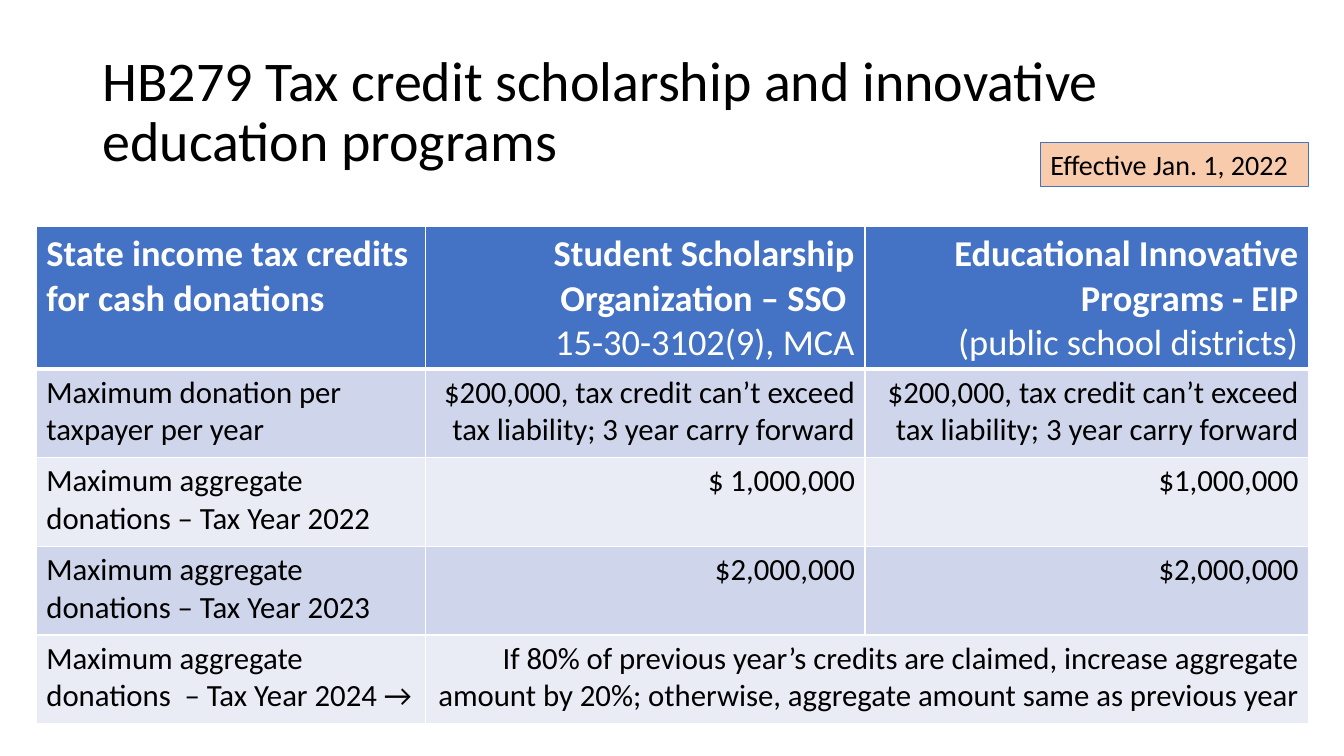
from lxml import etree
from pptx import Presentation, util as u
from pptx.dml.color import RGBColor
from pptx.enum import shapes, text
from pptx.oxml import ns

THEME = {
    "font": "Calibri", "ink": "000000", "white": "FFFFFF", "accent": "4472C4",
    "bands": ("CFD5EA", "E9EBF5"), "badge": "F8CBAD",
    "title": 40, "header": 26, "body": 22, "note": 20,
}
LEFT, RIGHT = 0.36, 12.98
TABLE_TOP = 2.25
COLUMNS = (3.86, 4.36, 4.4)
HEADER_HEIGHT, ROW_HEIGHT = 1.41, 0.88

DONATION_LIMIT = "$200,000, tax credit can’t exceed tax liability; 3 year carry forward"
ROWS = [
    ("State income tax credits for cash donations",
     "Student Scholarship Organization – SSO \n15-30-3102(9), MCA",
     "Educational Innovative Programs - EIP\n(public school districts)"),
    ("Maximum donation per taxpayer per year", DONATION_LIMIT, DONATION_LIMIT),
    ("Maximum aggregate donations – Tax Year 2022", "$ 1,000,000", "$1,000,000"),
    ("Maximum aggregate donations – Tax Year 2023", "$2,000,000", "$2,000,000"),
    ("Maximum aggregate donations  – Tax Year 2024 →",
     "If 80% of previous year’s credits are claimed, increase aggregate amount "
     "by 20%; otherwise, aggregate amount same as previous year", ""),
]


def write(frame, words, size, color, align=text.PP_ALIGN.LEFT, bold_first=False):
    """Fill a text frame; bold_first sets only the first paragraph bold."""
    frame.text = words
    frame.word_wrap = True
    for number, para in enumerate(frame.paragraphs):
        para.alignment = align
        for span in para.runs:
            span.font.name = THEME["font"]
            span.font.size = u.Pt(size)
            span.font.bold = bold_first and number == 0
            span.font.color.rgb = RGBColor.from_string(color)


def add_borders(cell, bottom):
    """Draw white cell edges, 1 pt wide except for the bottom one."""
    properties = cell._tc.get_or_add_tcPr()
    for side, width in (("L", 1), ("R", 1), ("T", 1), ("B", bottom)):
        edge = etree.SubElement(properties, ns.qn(f"a:ln{side}"), w=str(u.Pt(width)))
        fill = etree.SubElement(edge, ns.qn("a:solidFill"))
        etree.SubElement(fill, ns.qn("a:srgbClr"), val=THEME["white"])


deck = Presentation()
deck.slide_width, deck.slide_height = u.Inches(13.33), u.Inches(7.5)
page = deck.slides.add_slide(deck.slide_layouts[6])

# Title
title = page.shapes.add_textbox(u.Inches(0.92), u.Inches(0.4), u.Inches(11.5), u.Inches(1.45))
write(title.text_frame, "HB279 Tax credit scholarship and innovative education programs",
      THEME["title"], THEME["ink"])
title.text_frame.vertical_anchor = text.MSO_ANCHOR.MIDDLE
title.text_frame.paragraphs[0].line_spacing = 0.9

# Table of credits
frame = page.shapes.add_table(
    len(ROWS), len(COLUMNS), u.Inches(LEFT), u.Inches(TABLE_TOP),
    u.Inches(RIGHT - LEFT), u.Inches(HEADER_HEIGHT + ROW_HEIGHT * (len(ROWS) - 1)))
credits = frame.table
for column, width in zip(credits.columns, COLUMNS):
    column.width = u.Inches(width)

for r, entries in enumerate(ROWS):
    is_header = r == 0
    credits.rows[r].height = u.Inches(HEADER_HEIGHT if is_header else ROW_HEIGHT)
    background = THEME["accent"] if is_header else THEME["bands"][(r - 1) % 2]
    for c, words in enumerate(entries):
        cell = credits.cell(r, c)
        write(cell.text_frame, words,
              THEME["header"] if is_header else THEME["body"],
              THEME["white"] if is_header else THEME["ink"],
              text.PP_ALIGN.RIGHT if c else text.PP_ALIGN.LEFT, is_header)
        add_borders(cell, bottom=3 if is_header else 1)
        cell.fill.solid()
        cell.fill.fore_color.rgb = RGBColor.from_string(background)

last = len(ROWS) - 1
credits.cell(last, 1).merge(credits.cell(last, 2))

# Effective date, flush with the right edge of the table
badge_width = 2.66
badge = page.shapes.add_shape(
    shapes.MSO_SHAPE.RECTANGLE, u.Inches(RIGHT - badge_width), u.Inches(1.41),
    u.Inches(badge_width), u.Inches(0.44))
badge.shadow.inherit = False
badge.fill.solid()
badge.fill.fore_color.rgb = RGBColor.from_string(THEME["badge"])
badge.line.color.rgb = RGBColor.from_string(THEME["accent"])
badge.line.width = u.Pt(0.75)
write(badge.text_frame, "Effective Jan. 1, 2022", THEME["note"], THEME["ink"])
badge.text_frame.vertical_anchor = text.MSO_ANCHOR.TOP
badge.text_frame.auto_size = text.MSO_AUTO_SIZE.SHAPE_TO_FIT_TEXT

deck.save("out.pptx")
